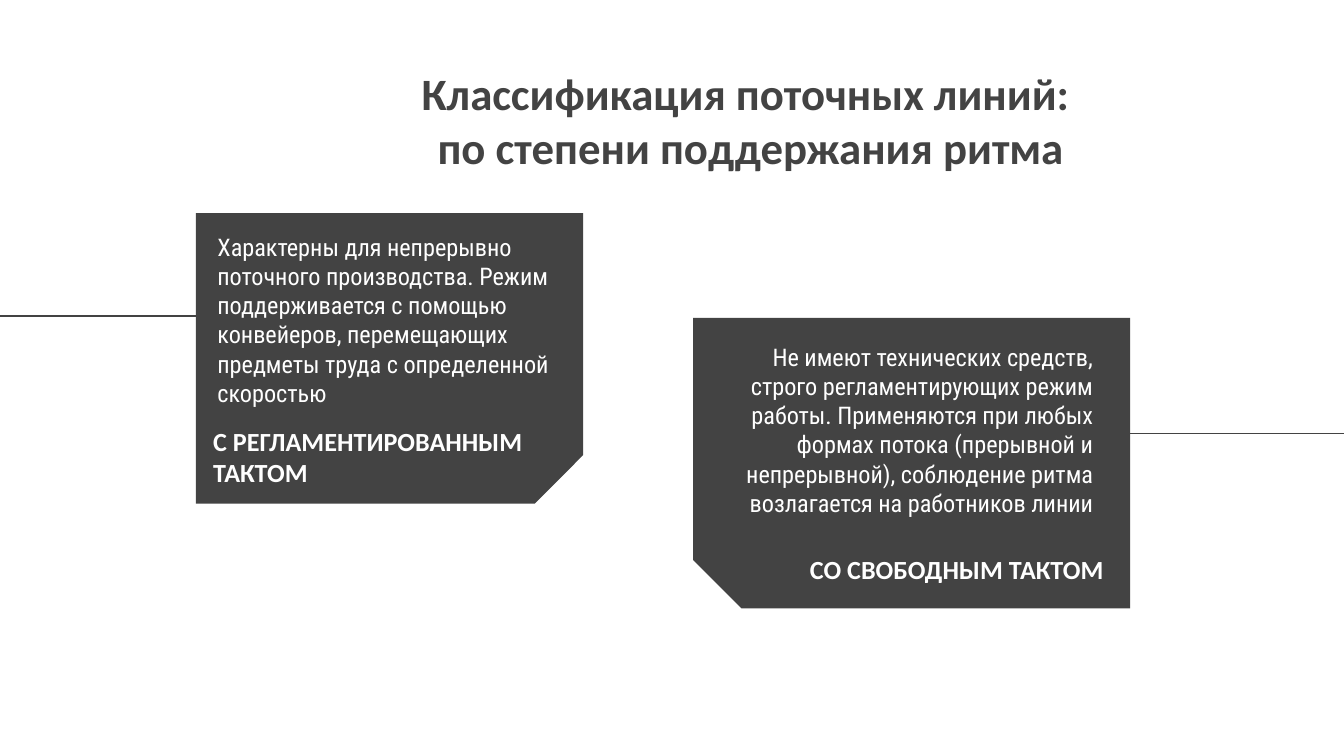
"""Build a slide that classifies flow lines by how strictly they keep rhythm."""
from lxml.etree import SubElement
from pptx import Presentation
from pptx.dml.color import RGBColor
from pptx.enum.shapes import MSO_CONNECTOR as Connector, MSO_SHAPE as Shape
from pptx.enum.text import MSO_ANCHOR as Anchor, PP_ALIGN as Align
from pptx.oxml.ns import qn
from pptx.util import Cm, Pt

DARK, WHITE = "434343", "FFFFFF"
TITLE = {"name": "Calibri", "size": Pt(24), "bold": True}
HEADING = {"name": "Calibri", "size": Pt(14), "bold": True}
BODY = {"name": "Roboto Condensed", "size": Pt(13), "bold": False}

TITLE_TEXT = "Классификация поточных линий: \vпо степени поддержания ритма"
TITLE_BOX = (5.46, 0.99, 17.45, 2.62)
CARDS = [
    {
        "box": (3.7, 4.03, 7.32, 5.49),
        "rotation": 90,
        "line": (6.73, -0.05, 5.97),
        "align": Align.LEFT,
        "heading": ("С РЕГЛАМЕНТИРОВАННЫМ ТАКТОМ", (3.78, 8.28, 6.83, 1.19)),
        "body": (
            "Характерны для непрерывно поточного производства. Режим "
            "поддерживается с помощью конвейеров, перемещающих предметы "
            "труда с определенной скоростью",
            (3.86, 4.14, 6.83, 2.79),
        ),
    },
    {
        "box": (13.1, 6.01, 8.26, 5.49),
        "rotation": 180,
        "line": (25.76, 18.57, 8.2),
        "align": Align.RIGHT,
        "heading": ("СО СВОБОДНЫМ ТАКТОМ", (14.71, 10.11, 6.4, 1.19)),
        "body": (
            "Не имеют технических средств, строго регламентирующих режим "
            "работы. Применяются при любых формах потока (прерывной и "
            "непрерывной), соблюдение ритма возлагается на работников линии",
            (13.31, 6.22, 7.59, 2.79),
        ),
    },
]


def color(value):
    return RGBColor.from_string(value)


def lengths(values):
    return [Cm(value) for value in values]


def set_all(target, values):
    for name, value in values.items():
        setattr(target, name, value)


def add_text(slide, text, box, font, ink, align, anchor=Anchor.TOP):
    frame = slide.shapes.add_textbox(*lengths(box)).text_frame
    margins = {f"margin_{side}": Cm(0.25) for side in ("left", "top", "right", "bottom")}
    set_all(frame, {"word_wrap": True, "vertical_anchor": anchor, **margins})
    frame.text = text
    paragraph = frame.paragraphs[0]
    paragraph.alignment = align
    for run in paragraph.runs:
        set_all(run.font, font)
        run.font.color.rgb = color(ink)


def add_panel(slide, box, rotation):
    left, top, width, height = box
    if rotation % 180:
        left, top = left + (width - height) / 2, top + (height - width) / 2
        width, height = height, width
    panel = slide.shapes.add_shape(
        Shape.SNIP_1_RECTANGLE, *lengths((left, top, width, height))
    )
    panel.rotation = rotation
    panel.shadow.inherit = False
    panel.fill.solid()
    panel.fill.fore_color.rgb = color(DARK)
    panel.line.fill.background()


def add_line(slide, start, end, y):
    line = slide.shapes.add_connector(Connector.STRAIGHT, *lengths((start, y, end, y)))
    line.line.color.rgb = color(DARK)
    line.line.width = Pt(0.75)
    SubElement(line.element.spPr, qn("a:effectLst"))


def main():
    presentation = Presentation()
    set_all(presentation, {"slide_width": Cm(25.4), "slide_height": Cm(14.29)})
    slide = presentation.slides.add_slide(presentation.slide_layouts[6])
    add_text(slide, TITLE_TEXT, TITLE_BOX, TITLE, DARK, Align.CENTER)
    for card in CARDS:
        add_panel(slide, card["box"], card["rotation"])
        add_line(slide, *card["line"])
        add_text(slide, *card["heading"], HEADING, WHITE, card["align"], Anchor.BOTTOM)
        add_text(slide, *card["body"], BODY, WHITE, card["align"])
    presentation.save("out.pptx")


if __name__ == "__main__":
    main()
